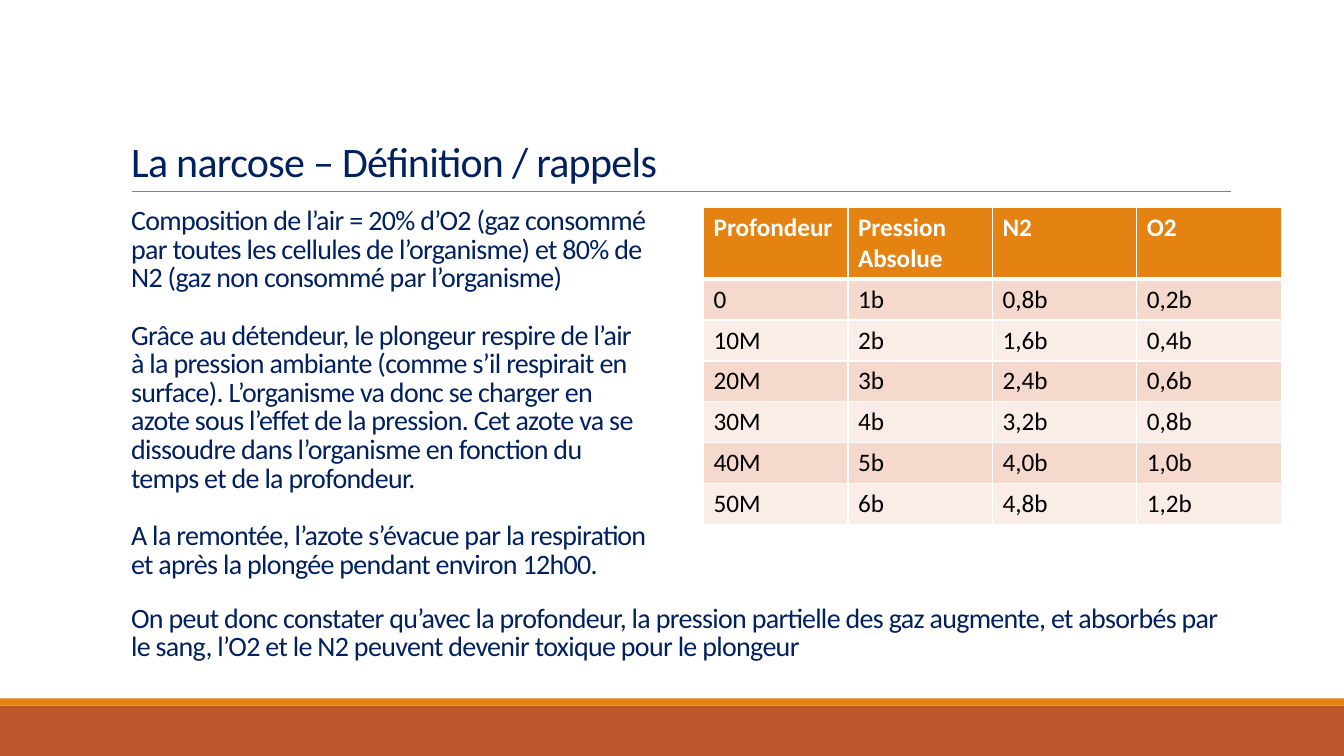
from lxml.etree import SubElement
from pptx import Presentation
from pptx.dml.color import RGBColor
from pptx.enum.shapes import MSO_CONNECTOR as Link, MSO_SHAPE as Shape
from pptx.enum.text import MSO_ANCHOR as Anchor, MSO_AUTO_SIZE as Fit, PP_ALIGN as Align
from pptx.oxml import parse_xml
from pptx.oxml.ns import nsdecls, qn
from pptx.util import Cm, Pt

NAVY = RGBColor(0x00, 0x20, 0x60)
RUST = RGBColor(0xBD, 0x58, 0x2C)
ORANGE = RGBColor(0xE4, 0x83, 0x12)
GRAY = RGBColor(0x80, 0x80, 0x80)
WHITE = RGBColor(0xFF, 0xFF, 0xFF)
BLACK = RGBColor(0x00, 0x00, 0x00)
ROSE = RGBColor(0xF5, 0xD9, 0xCC)
PALE = RGBColor(0xFA, 0xED, 0xE7)
FONT = "Calibri"

TITLE = "La narcose – Définition / rappels"
FACTS = [
    "Composition de l’air = 20% d’O2 (gaz consommé par toutes les cellules de "
    "l’organisme) et 80% de N2 (gaz non consommé par l’organisme)",
    "Grâce au détendeur, le plongeur respire de l’air à la pression ambiante "
    "(comme s’il respirait en surface). L’organisme va donc se charger en azote "
    "sous l’effet de la pression. Cet azote va se dissoudre dans l’organisme en "
    "fonction du temps et de la profondeur.",
    "A la remontée, l’azote s’évacue par la respiration et après la plongée "
    "pendant environ 12h00.",
]
RESULT = (
    "On peut donc constater qu’avec la profondeur, la pression partielle des gaz "
    "augmente, et absorbés par le sang, l’O2 et le N2 peuvent devenir toxique "
    "pour le plongeur"
)
ROWS = [
    ["Profondeur", "Pression Absolue", "N2", "O2"],
    ["0", "1b", "0,8b", "0,2b"],
    ["10M", "2b", "1,6b", "0,4b"],
    ["20M", "3b", "2,4b", "0,6b"],
    ["30M", "4b", "3,2b", "0,8b"],
    ["40M", "5b", "4,0b", "1,0b"],
    ["50M", "6b", "4,8b", "1,2b"],
]


def set_font(para, size, color, bold=False):
    font = para.font
    font.name, font.size, font.bold = FONT, Pt(size), bold
    font.color.rgb = color


def add_band(slide, top, height, color):
    band = slide.shapes.add_shape(Shape.RECTANGLE, 0, Cm(top), Cm(33.87), Cm(height))
    band.shadow.inherit = False
    band.fill.solid()
    band.fill.fore_color.rgb = color
    band.line.fill.background()


def add_rule(slide, left, right, top):
    rule = slide.shapes.add_connector(
        Link.STRAIGHT, Cm(left), Cm(top), Cm(right), Cm(top))
    rule.line.color.rgb = GRAY
    rule.line.width = Pt(0.5)
    SubElement(rule._element.spPr, qn("a:effectLst"))


def fill_holder(holder, box, texts, size):
    """Place a placeholder and give it plain, tightly set paragraphs."""
    holder.left, holder.top, holder.width, holder.height = map(Cm, box)
    frame = holder.text_frame
    frame.text = "\n".join(texts)
    frame.word_wrap = True
    frame.auto_size = Fit.NONE
    frame.vertical_anchor = Anchor.BOTTOM
    for i, para in enumerate(frame.paragraphs):
        para.alignment = Align.LEFT
        para.line_spacing = 0.85
        para.space_before = Pt(20.7 if i else 0)
        set_font(para, size, NAVY)
        props = para._p.get_or_add_pPr()
        props.set("marL", "0")
        props.set("indent", "0")
        props.get_or_add_defRPr().set("spc", "-50")
        props.insert_element_before(
            parse_xml(f"<a:buNone {nsdecls('a')}/>"), "a:tabLst", "a:defRPr")


def set_edge(cell, side, width):
    edge = SubElement(
        cell._tc.get_or_add_tcPr(), qn(f"a:ln{side}"), w=str(Pt(width)))
    fill = SubElement(edge, qn("a:solidFill"))
    SubElement(fill, qn("a:srgbClr"), val=str(WHITE))


def add_grid(slide, left, top):
    wide, head, high = Cm(3.64), Cm(1.77), Cm(1.03)
    count = len(ROWS[0])
    grid = slide.shapes.add_table(
        len(ROWS), count, Cm(left), Cm(top),
        wide * count, head + high * (len(ROWS) - 1)).table
    for col in grid.columns:
        col.width = wide
    for r, row in enumerate(ROWS):
        grid.rows[r].height = high if r else head
        for c, text in enumerate(row):
            cell = grid.cell(r, c)
            cell.text = text
            set_font(cell.text_frame.paragraphs[0], 18,
                     BLACK if r else WHITE, bold=r == 0)
            for side in "LRTB":
                thick = (r, side) in ((0, "B"), (1, "T"))
                set_edge(cell, side, 3 if thick else 1)
            cell.fill.solid()
            cell.fill.fore_color.rgb = (ROSE if r % 2 else PALE) if r else ORANGE


def main():
    deck = Presentation()
    deck.slide_width, deck.slide_height = Cm(33.87), Cm(19.05)
    slide = deck.slides.add_slide(deck.slide_layouts.get_by_name("Two Content"))
    title, facts, result = list(slide.placeholders)[:3]
    add_band(slide, 17.78, 1.27, RUST)
    add_band(slide, 17.6, 0.18, ORANGE)
    add_rule(slide, 3.33, 31.01, 4.83)
    fill_holder(title, (3.05, 1.9, 27.94, 2.92), [TITLE], 30)
    fill_holder(facts, (3.05, 4.83, 13.56, 9.91), FACTS, 20)
    fill_holder(result, (3.05, 14.99, 28.24, 1.83), [RESULT], 20)
    add_grid(slide, 17.73, 5.23)
    deck.save("out.pptx")


if __name__ == "__main__":
    main()
